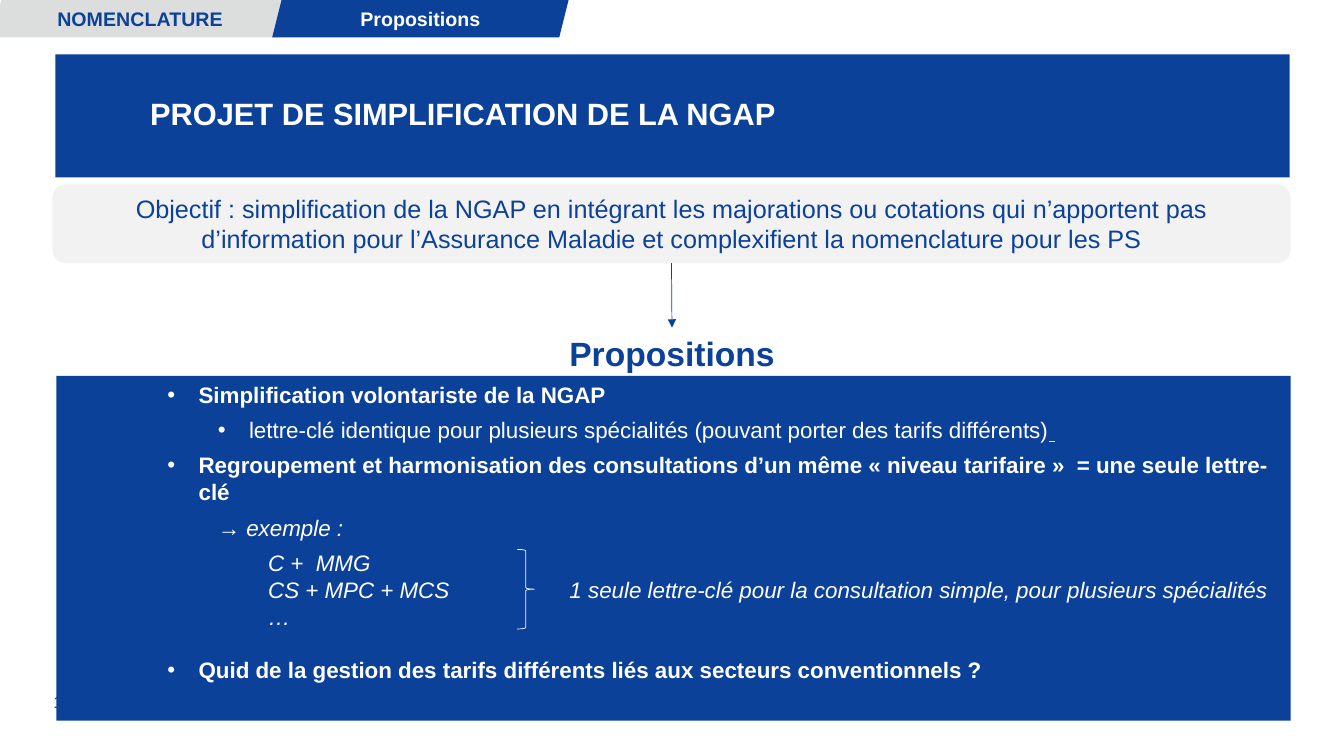
from dataclasses import dataclass

from lxml import etree
from pptx import Presentation
from pptx import util as u
from pptx.dml.color import RGBColor
from pptx.enum import shapes, text
from pptx.oxml import ns

BLUE = RGBColor(0x0C, 0x41, 0x9A)
WHITE = RGBColor(0xFF, 0xFF, 0xFF)
PALE = RGBColor(0xF2, 0xF2, 0xF2)
GREY = RGBColor(0xDC, 0xDE, 0xDE)
YELLOW = RGBColor(0xFF, 0xFF, 0x00)
FONT = "Arial"


@dataclass(frozen=True)
class Span:
    words: str
    size: float
    color: RGBColor = WHITE
    bold: bool = False
    italic: bool = False
    underline: bool = False


@dataclass(frozen=True)
class Panel:
    kind: shapes.MSO_SHAPE
    left: float
    top: float
    width: float
    height: float
    fill: RGBColor
    span: Span


@dataclass(frozen=True)
class Item:
    level: int
    indent: float
    spans: tuple[Span, ...]
    bullet: bool = False
    before: float = 0
    after: float = 6


OBJECTIVE = Panel(
    shapes.MSO_SHAPE.ROUNDED_RECTANGLE, 0.52, 1.83, 12.28, 0.78, PALE,
    Span("Objectif : simplification de la NGAP en intégrant les majorations ou cotations "
         "qui n’apportent pas d’information pour l’Assurance Maladie et complexifient "
         "la nomenclature pour les PS", 18, BLUE),
)
TABS = (
    Panel(shapes.MSO_SHAPE.PARALLELOGRAM, -0.08, 0, 2.94, 0.37, GREY,
          Span("NOMENCLATURE", 14, BLUE, bold=True)),
    Panel(shapes.MSO_SHAPE.PARALLELOGRAM, 2.7, 0, 2.94, 0.37, BLUE,
          Span("Propositions", 14, WHITE, bold=True)),
)
ITEMS = (
    Item(2, 1.31, (Span("Simplification volontariste de la NGAP", 16, bold=True),), True),
    Item(3, 1.81, (
        Span("lettre-clé identique pour plusieurs spécialités "
             "(pouvant porter des tarifs différents)", 16),
        Span(" ", 16, YELLOW, bold=True, underline=True),
    ), True),
    Item(2, 1.31, (Span("Regroupement et harmonisation des consultations d’un même "
                        "« niveau tarifaire »  = une seule lettre-clé", 16, bold=True),), True),
    Item(3, 1.5, (Span("→ exemple :", 16, italic=True),)),
    Item(4, 2, (Span("C +  MMG", 16, italic=True),), after=0),
    Item(4, 2, (Span("CS + MPC + MCS", 16, italic=True),), after=0),
    Item(4, 2, (Span("…", 16, italic=True),), after=0),
    Item(2, 1.31, (Span("Quid de la gestion des tarifs différents liés aux secteurs "
                        "conventionnels ?", 16, bold=True),), True, before=19),
)
OUTCOME = Span("1 seule lettre-clé pour la consultation simple, pour plusieurs spécialités",
               16, italic=True)


def add_span(para, span: Span) -> None:
    run = para.add_run()
    run.text = span.words
    run.font.name = FONT
    run.font.size = u.Pt(span.size)
    run.font.color.rgb = span.color
    run.font.bold = span.bold
    run.font.italic = span.italic
    run.font.underline = span.underline


def place(shape, left: float, top: float, width: float, height: float) -> None:
    shape.left, shape.top = u.Inches(left), u.Inches(top)
    shape.width, shape.height = u.Inches(width), u.Inches(height)


def paint(shape, color: RGBColor) -> None:
    shape.fill.solid()
    shape.fill.fore_color.rgb = color


def add_panel(page, panel: Panel):
    shape = page.shapes.add_shape(
        panel.kind, u.Inches(panel.left), u.Inches(panel.top),
        u.Inches(panel.width), u.Inches(panel.height))
    shape.shadow.inherit = False
    paint(shape, panel.fill)
    shape.line.fill.background()
    frame = shape.text_frame
    frame.word_wrap = True
    frame.vertical_anchor = text.MSO_ANCHOR.MIDDLE
    frame.paragraphs[0].alignment = text.PP_ALIGN.CENTER
    add_span(frame.paragraphs[0], panel.span)
    return shape


def add_label(page, left: float, top: float, width: float, height: float,
              span: Span, align: text.PP_ALIGN, anchor: text.MSO_ANCHOR):
    box = page.shapes.add_textbox(
        u.Inches(left), u.Inches(top), u.Inches(width), u.Inches(height))
    box.text_frame.word_wrap = True
    box.text_frame.vertical_anchor = anchor
    box.text_frame.paragraphs[0].alignment = align
    add_span(box.text_frame.paragraphs[0], span)
    return box


def add_item(para, item: Item) -> None:
    props = para._p.get_or_add_pPr()
    props.set("marL", str(u.Inches(item.indent)))
    props.set("indent", str(u.Inches(-0.31) if item.bullet else 0))
    if item.bullet:
        etree.SubElement(props, ns.qn("a:buFont")).set("typeface", FONT)
        etree.SubElement(props, ns.qn("a:buChar")).set("char", "•")
    else:
        etree.SubElement(props, ns.qn("a:buNone"))
    para.level = item.level
    para.alignment = text.PP_ALIGN.LEFT
    para.space_before = u.Pt(item.before)
    para.space_after = u.Pt(item.after)
    for span in item.spans:
        add_span(para, span)


def fill_title(title) -> None:
    place(title, 0.55, 0.54, 12.24, 1.22)
    paint(title, BLUE)
    frame = title.text_frame
    frame.auto_size = text.MSO_AUTO_SIZE.NONE
    frame.vertical_anchor = text.MSO_ANCHOR.MIDDLE
    frame.margin_left = u.Inches(0.94)
    frame.margin_top = frame.margin_right = frame.margin_bottom = u.Inches(0.08)
    para = frame.paragraphs[0]
    para.alignment = text.PP_ALIGN.LEFT
    para.line_spacing = 0.9
    add_span(para, Span("PROJET DE SIMPLIFICATION DE LA NGAP", 22, bold=True))


def fill_body(body) -> None:
    place(body, 0.56, 3.73, 12.24, 3.42)
    paint(body, BLUE)
    frame = body.text_frame
    frame.auto_size = text.MSO_AUTO_SIZE.NONE
    frame.vertical_anchor = text.MSO_ANCHOR.TOP
    for index, item in enumerate(ITEMS):
        add_item(frame.add_paragraph() if index else frame.paragraphs[0], item)


def add_arrow(page, start, end) -> None:
    arrow = page.shapes.add_connector(shapes.MSO_CONNECTOR.STRAIGHT, 0, 0, 0, 0)
    arrow.begin_connect(start, 2)
    arrow.end_connect(end, 0)
    arrow.line.color.rgb = BLUE
    arrow.line.width = u.Pt(0.5)
    etree.SubElement(arrow.line._get_or_add_ln(), ns.qn("a:tailEnd")).set("type", "triangle")
    etree.SubElement(arrow._element.spPr, ns.qn("a:effectLst"))


def add_brace(page) -> None:
    brace = page.shapes.add_shape(
        shapes.MSO_SHAPE.RIGHT_BRACE, u.Inches(5.13), u.Inches(5.45),
        u.Inches(0.17), u.Inches(0.79))
    brace.shadow.inherit = False
    brace.fill.background()
    brace.line.color.rgb = WHITE
    brace.line.width = u.Pt(0.5)


def main() -> None:
    deck = Presentation()
    deck.slide_width, deck.slide_height = u.Inches(13.33), u.Inches(7.5)
    page = deck.slides.add_slide(deck.slide_layouts[1])
    fill_title(page.shapes.title)
    add_label(page, 0.43, 6.81, 0.79, 0.31, Span("13", 12, BLUE),
              text.PP_ALIGN.LEFT, text.MSO_ANCHOR.MIDDLE)
    objective = add_panel(page, OBJECTIVE)
    for tab in TABS:
        add_panel(page, tab)
    body = page.placeholders[1]
    fill_body(body)
    page.shapes._spTree.append(body._element)
    heading = add_label(page, 3.29, 3.25, 6.75, 0.5, Span("Propositions", 24, BLUE, bold=True),
                        text.PP_ALIGN.CENTER, text.MSO_ANCHOR.TOP)
    add_arrow(page, objective, heading)
    add_brace(page)
    add_label(page, 5.55, 5.66, 7.2, 0.37, OUTCOME,
              text.PP_ALIGN.LEFT, text.MSO_ANCHOR.MIDDLE)
    deck.save("out.pptx")


if __name__ == "__main__":
    main()
